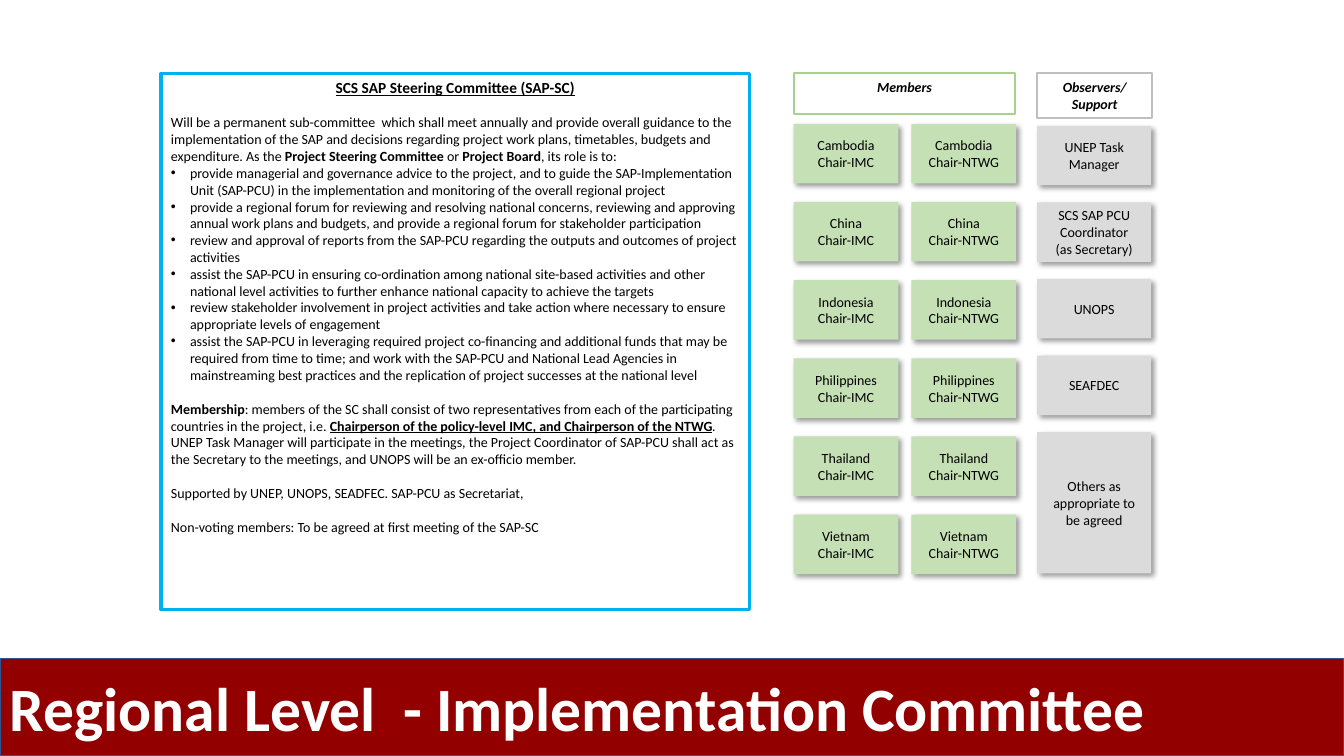
"""Build the slide on the regional steering committee and its members."""
from lxml.etree import SubElement
from pptx import Presentation
from pptx.dml.color import RGBColor
from pptx.enum.shapes import MSO_SHAPE
from pptx.enum.text import MSO_ANCHOR, PP_ALIGN
from pptx.oxml.ns import qn
from pptx.util import Cm, Pt

COUNTRIES = ["Cambodia", "China", "Indonesia", "Philippines", "Thailand", "Vietnam"]
CHAIRS = ["Chair-IMC", "Chair-NTWG"]
OBSERVERS = [
    ["UNEP Task Manager"],
    ["SCS SAP PCU Coordinator", "(as Secretary)"],
    ["UNOPS"],
    ["SEAFDEC"],
    ["Others as appropriate to be agreed"],
]
INTRODUCTION = [
    ("Will be a permanent sub-committee  which shall meet annually and provide overall guidance to the "
     "implementation of the SAP and decisions regarding project work plans, timetables, budgets and "
     "expenditure. As the ", ""),
    ("Project Steering Committee", "b"),
    (" or ", ""),
    ("Project Board", "b"),
    (", its role is to:", ""),
]
ROLES = [
    "provide managerial and governance advice to the project, and to guide the SAP-Implementation "
    "Unit (SAP-PCU) in the implementation and monitoring of the overall regional project",
    "provide a regional forum for reviewing and resolving national concerns, reviewing and approving "
    "annual work plans and budgets, and provide a regional forum for stakeholder participation",
    "review and approval of reports from the SAP-PCU regarding the outputs and outcomes of project activities",
    "assist the SAP-PCU in ensuring co-ordination among national site-based activities and other "
    "national level activities to further enhance national capacity to achieve the targets",
    "review stakeholder involvement in project activities and take action where necessary to ensure "
    "appropriate levels of engagement",
    "assist the SAP-PCU in leveraging required project co-financing and additional funds that may be "
    "required from time to time; and work with the SAP-PCU and National Lead Agencies in "
    "mainstreaming best practices and the replication of project successes at the national level",
]
CLOSING = [
    [
        ("Membership", "b"),
        (": members of the SC shall consist of two representatives from each of the participating "
         "countries in the project, i.e. ", ""),
        ("Chairperson of the policy-level IMC, and Chairperson of the NTWG", "bu"),
        (". UNEP Task Manager will participate in the meetings, the Project Coordinator of SAP-PCU shall act "
         "as the Secretary to the meetings, and UNOPS will be an ex-officio member.", ""),
    ],
    [("Supported by UNEP, UNOPS, SEADFEC. SAP-PCU as Secretariat,", "")],
    [("Non-voting members: To be agreed at first meeting of the SAP-SC", "")],
]


def color(value):
    return RGBColor.from_string(value)


class SlideBuilder:
    font = "Calibri"
    text_color = "000000"
    green, gray = "C5E0B4", "DBDBDB"
    body_size = 10
    paragraph_gap = 12.2

    def __init__(self, slide):
        self.slide = slide

    def box(self, left, top, width, height, fill=None, line=None, line_width=1, anchor=MSO_ANCHOR.TOP):
        shape = self.slide.shapes.add_shape(
            MSO_SHAPE.RECTANGLE, Cm(left), Cm(top), Cm(width), Cm(height))
        shape.shadow.inherit = False
        if fill:
            shape.fill.solid()
            shape.fill.fore_color.rgb = color(fill)
        else:
            shape.fill.background()
        if line:
            shape.line.color.rgb = color(line)
            shape.line.width = Pt(line_width)
        else:
            shape.line.fill.background()
        shape.text_frame.word_wrap = True
        shape.text_frame.vertical_anchor = anchor
        return shape

    def paragraph(self, shape, runs, size=body_size, align=PP_ALIGN.LEFT, gap=0, text_color=text_color):
        frame = shape.text_frame
        first = frame.paragraphs[0]
        paragraph = frame.add_paragraph() if first.runs else first
        paragraph.alignment = align
        paragraph.space_before = Pt(gap)
        for text, style in runs:
            run = paragraph.add_run()
            run.text = text
            run.font.name = self.font
            run.font.size = Pt(size)
            run.font.color.rgb = color(text_color)
            run.font.bold = "b" in style
            run.font.italic = "i" in style
            run.font.underline = "u" in style
        return paragraph

    def bullet(self, shape, text):
        properties = self.paragraph(shape, [(text, "")])._p.get_or_add_pPr()
        indent = Cm(0.48)
        properties.set("marL", str(indent))
        properties.set("indent", str(-indent))
        SubElement(properties, qn("a:buFont"), typeface="Arial")
        SubElement(properties, qn("a:buChar"), char="•")

    def centered_lines(self, shape, lines, style=""):
        for line in lines:
            self.paragraph(shape, [(line, style)], align=PP_ALIGN.CENTER)

    def card(self, left, top, width, height, fill, lines):
        shape = self.box(left, top, width, height, fill, anchor=MSO_ANCHOR.MIDDLE)
        effects = shape._element.spPr.find(qn("a:effectLst"))
        shadow = SubElement(effects, qn("a:outerShdw"), blurRad=str(Pt(4)), dist=str(Pt(3)),
                            dir="2700000", algn="tl", rotWithShape="0")
        shade = SubElement(shadow, qn("a:srgbClr"), val="000000")
        SubElement(shade, qn("a:alpha"), val="40000")
        self.centered_lines(shape, lines)

    def header(self, left, width, height, line, lines):
        shape = self.box(left, 1.85, width, height, line=line, line_width=1.5)
        self.centered_lines(shape, lines, "bi")

    def committee(self):
        shape = self.box(4.06, 1.85, 14.83, 13.51, line="00B0F0", line_width=2.25)
        self.paragraph(shape, [("SCS SAP Steering Committee (SAP-SC)", "bu")], 11, PP_ALIGN.CENTER)
        self.paragraph(shape, INTRODUCTION, gap=self.paragraph_gap)
        for role in ROLES:
            self.bullet(shape, role)
        for runs in CLOSING:
            self.paragraph(shape, runs, gap=self.paragraph_gap)

    def members(self):
        self.header(20, 5.59, 1.02, "A9D18E", ["Members"])
        for row, country in enumerate(COUNTRIES):
            for column, chair in enumerate(CHAIRS):
                self.card(20 + 2.97 * column, 3.12 + 1.97 * row, 2.64, 1.5, self.green, [country, chair])

    def observers(self):
        self.header(26.14, 2.9, 1.12, "BFBFBF", ["Observers/", "Support"])
        for row, lines in enumerate(OBSERVERS):
            height = 3.56 if row == len(OBSERVERS) - 1 else 1.5
            self.card(26.14, 3.17 + 1.93 * row, 2.87, height, self.gray, lines)

    def title(self, text):
        shape = self.box(0, 16.59, 33.87, 2.46, "920000", "325491", 1, MSO_ANCHOR.MIDDLE)
        self.paragraph(shape, [(text, "b")], 44, text_color="FFFFFF")


def main():
    presentation = Presentation()
    presentation.slide_width, presentation.slide_height = Cm(33.87), Cm(19.05)
    builder = SlideBuilder(presentation.slides.add_slide(presentation.slide_layouts[6]))
    builder.committee()
    builder.members()
    builder.observers()
    builder.title("Regional Level  - Implementation Committee")
    presentation.save("out.pptx")


if __name__ == "__main__":
    main()
